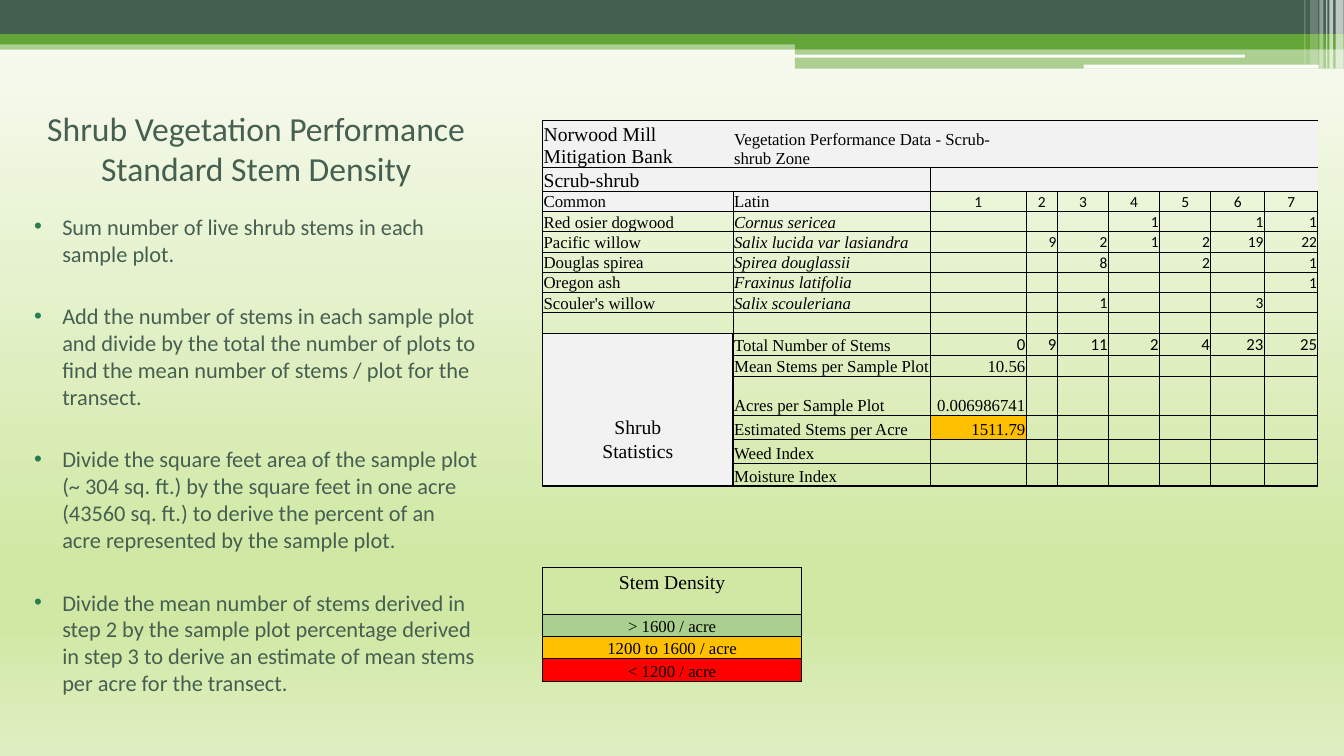
"""Build the shrub stem density slide."""
from dataclasses import dataclass
from typing import Any, Callable, NamedTuple

from lxml import etree
from pptx import Presentation
from pptx.dml.color import RGBColor
from pptx.enum.shapes import MSO_SHAPE
from pptx.enum.text import MSO_ANCHOR, PP_ALIGN
from pptx.oxml.ns import qn
from pptx.slide import Slide
from pptx.util import Cm, Pt

LEFT, MID, RIGHT = PP_ALIGN.LEFT, PP_ALIGN.CENTER, PP_ALIGN.RIGHT
BASE = MSO_ANCHOR.BOTTOM
RECT = MSO_SHAPE.RECTANGLE
ROUND = MSO_SHAPE.ROUNDED_RECTANGLE


@dataclass(frozen=True)
class Theme:
    dark: str = "455F51"
    green: str = "63A537"
    white: str = "FFFFFF"
    black: str = "000000"
    pale: str = "FAFCF5"
    mild: str = "D1E8A5"
    foot: str = "E0EFC3"
    dot: str = "297D53"
    gray: str = "F2F2F2"
    good: str = "A9D08E"
    fair: str = "FFC000"
    poor: str = "FF0000"
    sans: str = "Calibri"
    serif: str = "Times New Roman"
    title: float = 24
    body: float = 16
    head: float = 14
    cell: float = 12
    count: float = 11


THEME = Theme()


class Bar(NamedTuple):
    left: float
    top: float
    width: float
    height: float
    color: str
    alpha: int = 100
    kind: Any = RECT


class Look(NamedTuple):
    align: Any = LEFT
    size: float = THEME.cell
    face: str = THEME.serif
    slant: bool = False
    fill: str = ""


@dataclass(frozen=True)
class Grid:
    left: float
    top: float
    cols: list[float]
    rows: list[float]
    text: list[str]
    look: Callable[[int, int], Look]
    across: Callable[[int, int], float]
    down: Callable[[int, int], float]


BARS = [
    Bar(0, 1.02, 33.87, 0.23, THEME.green, 50),
    Bar(0, 0, 33.87, 0.86, THEME.dark),
    Bar(0, 0.86, 33.87, 0.26, THEME.green),
    Bar(20.03, 0.99, 13.84, 0.25, THEME.green),
    Bar(20.03, 1.23, 13.84, 0.5, THEME.green, 50),
    Bar(20.02, 1.38, 11.35, 0.07, THEME.pale, kind=ROUND),
    Bar(27.31, 1.63, 5.92, 0.1, THEME.pale, kind=ROUND),
    Bar(33.66, 0, 0.2, 1.73, THEME.white, 65),
    Bar(33.5, 0, 0.1, 1.73, THEME.white, 65),
    Bar(33.42, 0, 0.03, 1.73, THEME.white, 60),
    Bar(33.25, 0, 0.1, 1.73, THEME.white, 40),
    Bar(33.02, 0, 0.2, 1.63, THEME.white, 20),
    Bar(32.87, 0, 0.03, 1.63, THEME.white, 30),
]

TITLE = "Shrub Vegetation Performance Standard Stem Density"
STEPS = [
    "Sum number of live shrub stems in each sample plot.",
    "Add the number of stems in each sample plot and divide by the total the number of plots to find the mean number of stems / plot for the transect.",
    "Divide the square feet area of the sample plot (~ 304 sq. ft.) by the square feet in one acre (43560 sq. ft.) to derive the percent of an acre represented by the sample plot.",
    "Divide the mean number of stems derived in step 2 by the sample plot percentage derived in step 3 to derive an estimate of mean stems per acre for the transect.",
]
STEMS = [
    "Norwood Mill Mitigation Bank|Vegetation Performance Data - Scrub-shrub Zone",
    "Scrub-shrub",
    "Common|Latin|1|2|3|4|5|6|7",
    "Red osier dogwood|Cornus sericea||||1||1|1",
    "Pacific willow|Salix lucida var lasiandra||9|2|1|2|19|22",
    "Douglas spirea|Spirea douglassii|||8||2||1",
    "Oregon ash|Fraxinus latifolia|||||||1",
    "Scouler's willow|Salix scouleriana|||1|||3|",
    "",
    "|Total Number of Stems|0|9|11|2|4|23|25",
    "|Mean Stems per Sample Plot|10.56",
    "|Acres per Sample Plot|0.006986741",
    "Shrub|Estimated Stems per Acre|1511.79",
    "Statistics|Weed Index",
    "|Moisture Index",
]
LEVELS = ["Stem Density", "", "> 1600 / acre", "1200 to 1600 / acre", "< 1200 / acre"]


def stem_look(row: int, col: int) -> Look:
    """Return the format of a stem table cell."""
    gray = row < 2 or (row == 2 and col < 2) or (row > 8 and col == 0)
    fill = THEME.gray if gray else THEME.fair if (row, col) == (12, 2) else ""
    if col == 0:
        big = row < 2 or row in (12, 13)
        return Look(MID if row > 8 else LEFT, THEME.head if big else THEME.cell, fill=fill)
    if col == 1:
        return Look(slant=2 < row < 8, fill=fill)
    size = THEME.count if 1 < row < 9 else THEME.cell
    face = THEME.sans if 1 < row < 10 else THEME.serif
    return Look(MID if row == 2 else RIGHT, size, face, fill=fill)


def stem_across(row: int, col: int) -> float:
    """Return the width of the line above a stem table cell."""
    if col == 0 and 9 < row < 15:
        return 0
    return 1 if row == 15 or (row == 9 and col) else 0.5


def stem_down(row: int, col: int) -> float:
    """Return the width of the line left of a stem table cell."""
    if row < 2:
        return 0.5 if col == 0 or (row, col) == (1, 2) else 0
    return 1 if (row == 9 and col < 9) or (row > 9 and col < 3) else 0.5


def level_look(row: int, col: int) -> Look:
    """Return the format of a density level."""
    fill = ["", "", THEME.good, THEME.fair, THEME.poor][row]
    return Look(MID, THEME.cell if row else THEME.head, fill=fill)


GRIDS = [
    Grid(13.67, 3.04, [4.8, 4.97, 2.42, 0.78] + [1.29] * 3 + [1.35] * 2,
         [1.16, 0.59] + [0.51] * 6 + [0.52] + [0.54] * 2 + [0.99, 0.59, 0.6, 0.58],
         STEMS, stem_look, stem_across, stem_down),
    Grid(13.67, 14.31, [6.53], [0.66, 0.52, 0.55, 0.55, 0.58], LEVELS, level_look,
         lambda row, col: [1, 0, 0.5, 0.5, 0.5, 1][row], lambda row, col: 1),
]


def assign(item: Any, values: dict[str, Any]) -> None:
    """Set each named value on an item."""
    for name, value in values.items():
        setattr(item, name, value)


def paint(fill: Any, color: str) -> None:
    """Fill with a colour, or with none."""
    if color:
        fill.solid()
        fill.fore_color.rgb = RGBColor.from_string(color)
    else:
        fill.background()


def node(owner: Any, tag: str, **values: str) -> Any:
    """Add a drawing element to its owner."""
    return etree.SubElement(owner, qn(f"a:{tag}"), values)


def add_back(slide: Slide) -> None:
    """Give the slide its gradient."""
    fill = slide.background.fill
    fill.gradient()
    fill.gradient_angle = 270
    stops = next(slide.element.iter(qn("a:gsLst")))
    stops.clear()
    for place, color in ((0, THEME.pale), (74, THEME.mild), (83, THEME.mild), (100, THEME.foot)):
        node(node(stops, "gs", pos=str(place * 1000)), "srgbClr", val=color)


def add_bar(slide: Slide, bar: Bar) -> None:
    """Draw one band of the header."""
    shape = slide.shapes.add_shape(bar.kind, *map(Cm, bar[:4]))
    shape.shadow.inherit = False
    shape.line.fill.background()
    paint(shape.fill, bar.color)
    if bar.alpha < 100:
        color = next(shape.element.spPr.iter(qn("a:srgbClr")))
        node(color, "alpha", val=str(bar.alpha * 1000))


def add_run(line: Any, text: str, color: str, form: dict[str, Any]) -> None:
    """Add a run of text in a given format."""
    run = line.add_run()
    run.text = text
    assign(run.font, form)
    run.font.color.rgb = RGBColor.from_string(color)


def add_steps(slide: Slide) -> None:
    """Write the title and the list of steps."""
    frame = slide.shapes.add_textbox(Cm(0.3), Cm(2.59), Cm(12.01), Cm(15.93)).text_frame
    frame.word_wrap = True
    for index, text in enumerate([TITLE, *STEPS]):
        line = frame.add_paragraph() if index else frame.paragraphs[0]
        gap = (3, 17.5)[index] if index < 2 else 25.5
        assign(line, {"space_before": Pt(gap), "alignment": LEFT if index else MID})
        props = line._p.get_or_add_pPr()
        props.set("marL", str(Cm(1.02 if index else 0.3)))
        props.set("indent", str(Cm(-0.71 if index else 0)))
        if index:
            node(node(props, "buClr"), "srgbClr", val=THEME.dot)
            node(props, "buFont", typeface="Arial")
            node(props, "buChar", char="•")
        size = THEME.body if index else THEME.title
        add_run(line, text, THEME.dark, {"name": THEME.sans, "size": Pt(size)})


def add_edge(cell: Any, side: str, width: float) -> None:
    """Draw one side of a cell."""
    edge = node(cell._tc.get_or_add_tcPr(), f"ln{side}", w=str(Pt(width)))
    if width:
        node(node(edge, "solidFill"), "srgbClr", val=THEME.black)
    else:
        node(edge, "noFill")


def add_grid(slide: Slide, grid: Grid) -> None:
    """Draw a table with its text, fills and lines."""
    size = Cm(sum(grid.cols)), Cm(sum(grid.rows))
    table = slide.shapes.add_table(len(grid.rows), len(grid.cols), Cm(grid.left), Cm(grid.top), *size).table
    assign(table, {"first_row": False, "horz_banding": False})
    for col, width in zip(table.columns, grid.cols):
        col.width = Cm(width)
    for row, height in enumerate(grid.rows):
        table.rows[row].height = Cm(height)
        words = grid.text[row].split("|")
        for col in range(len(grid.cols)):
            cell, look = table.cell(row, col), grid.look(row, col)
            assign(cell, {"margin_left": Cm(0.03), "margin_right": Cm(0.02), "margin_top": 0,
                          "margin_bottom": 0, "vertical_anchor": BASE})
            for side, width in (("L", grid.down(row, col)), ("R", grid.down(row, col + 1)),
                                ("T", grid.across(row, col)), ("B", grid.across(row + 1, col))):
                add_edge(cell, side, width)
            paint(cell.fill, look.fill)
            line = cell.text_frame.paragraphs[0]
            line.alignment = look.align
            if col < len(words) and words[col]:
                add_run(line, words[col], THEME.black,
                        {"name": look.face, "size": Pt(look.size), "italic": look.slant})
            else:
                node(line._p, "endParaRPr", sz=str(int(THEME.count * 100)))
    if len(grid.cols) > 2:
        table.cell(0, 1).merge(table.cell(0, 2))


def main() -> None:
    """Build and save the slide."""
    deck = Presentation()
    assign(deck, {"slide_width": Cm(33.87), "slide_height": Cm(19.05)})
    slide = deck.slides.add_slide(deck.slide_layouts[6])
    add_back(slide)
    for bar in BARS:
        add_bar(slide, bar)
    add_steps(slide)
    for grid in GRIDS:
        add_grid(slide, grid)
    deck.save("out.pptx")


if __name__ == "__main__":
    main()
